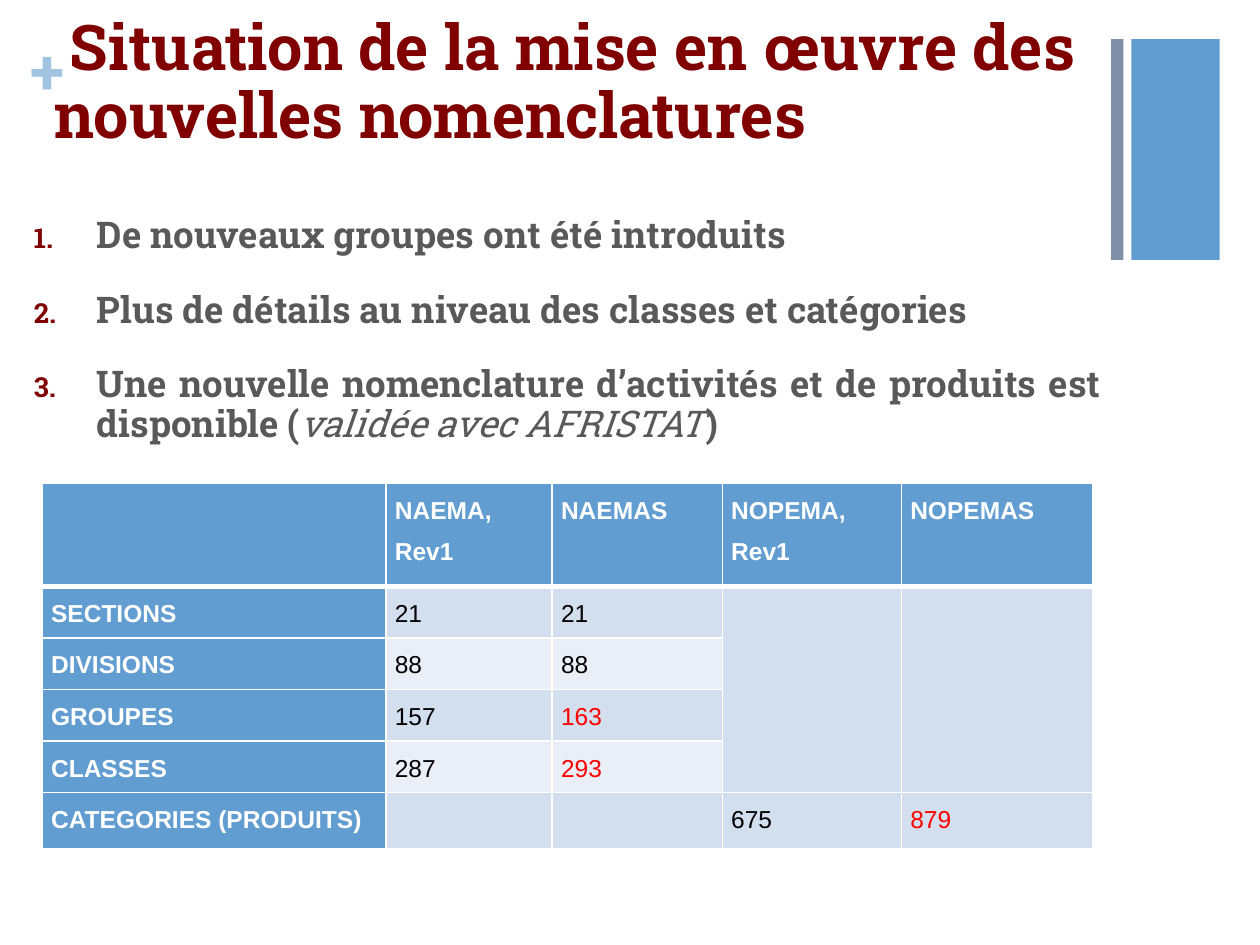
from lxml.etree import SubElement
from pptx import Presentation
from pptx.dml.color import RGBColor
from pptx.enum.shapes import MSO_SHAPE as Shape
from pptx.enum.text import MSO_ANCHOR as Anchor, MSO_AUTO_SIZE as AutoSize, PP_ALIGN as Align
from pptx.oxml.ns import qn
from pptx.util import Cm, Pt

COLOURS = {
    "blue": "629DD1", "pale_blue": "A1C4E3", "slate": "7F8FA9",
    "maroon": "800000", "grey": "595959", "white": "FFFFFF",
    "black": "000000", "red": "FF0000", "band": "D3DFEE", "light_band": "EAEFF7",
}
SLAB = "Roboto Slab"
POINTS = [
    [("De nouveaux groupes ont été introduits", False)],
    [("Plus de détails au niveau des classes et catégories", False)],
    [("Une nouvelle nomenclature d’activités et de produits est disponible (", False),
     ("validée avec AFRISTAT", True), (")", False)],
]
ROWS = [
    ["", "NAEMA, Rev1", "NAEMAS", "NOPEMA, Rev1", "NOPEMAS"],
    ["SECTIONS", "21", "21", "", ""],
    ["DIVISIONS", "88", "88", "", ""],
    ["GROUPES", "157", "163", "", ""],
    ["CLASSES", "287", "293", "", ""],
    ["CATEGORIES (PRODUITS)", "", "", "675", "879"],
]
CHANGED = {"163", "293", "879"}
COLUMN_WIDTHS = [6.93, 3.35, 3.43, 3.61, 3.86]
ROW_HEIGHTS = [2.08, 1.04, 1.04, 1.04, 1.04, 1.12]


def rgb(name):
    return RGBColor.from_string(COLOURS[name])


def add_span(para, text, size, colour, font=SLAB, bold=True, italic=False):
    span = para.add_run()
    span.text = text
    span.font.size = Pt(size)
    span.font.name = font
    span.font.bold = bold
    span.font.italic = italic
    span.font.color.rgb = rgb(colour)


def place(box, left, top, width, height):
    box.left, box.top, box.width, box.height = Cm(left), Cm(top), Cm(width), Cm(height)


def add_bar(page, left, width, colour):
    bar = page.shapes.add_shape(Shape.RECTANGLE, Cm(left), Cm(0.79), Cm(width), Cm(4.45))
    bar.shadow.inherit = False
    bar.fill.solid()
    bar.fill.fore_color.rgb = rgb(colour)
    bar.line.fill.background()


def add_plus(page):
    frame = page.shapes.add_textbox(Cm(0.61), Cm(0.64), Cm(0.71), Cm(1.55)).text_frame
    frame.margin_left = frame.margin_right = frame.margin_top = frame.margin_bottom = 0
    frame.word_wrap = False
    add_span(frame.paragraphs[0], "+", 36, "pale_blue")


def fill_title(page):
    title = page.shapes.title
    place(title, 0.84, 0.43, 21.16, 2.54)
    frame = title.text_frame
    frame.auto_size = AutoSize.NONE
    frame.vertical_anchor = Anchor.MIDDLE
    para = frame.paragraphs[0]
    para.alignment = Align.LEFT
    para.line_spacing = 0.9
    add_span(para, " Situation de la mise en œuvre des nouvelles nomenclatures", 36, "maroon")


def number_para(para):
    props = para._p.get_or_add_pPr()
    props.set("marL", str(Cm(1.27)))
    props.set("indent", str(-Cm(1.27)))
    colour = SubElement(props, qn("a:buClr"))
    SubElement(colour, qn("a:srgbClr"), val=COLOURS["maroon"])
    SubElement(props, qn("a:buSzPct"), val="75000")
    SubElement(props, qn("a:buFont"), typeface=SLAB)
    SubElement(props, qn("a:buAutoNum"), type="arabicPeriod")


def fill_list(page):
    body = page.placeholders[1]
    place(body, 0.43, 4.24, 22.02, 13.41)
    frame = body.text_frame
    frame.auto_size = AutoSize.NONE
    for index, point in enumerate(POINTS):
        para = frame.add_paragraph() if index else frame.paragraphs[0]
        para.level = 1
        para.alignment = Align.JUSTIFY
        para.line_spacing = 0.9
        para.space_before = Pt(20)
        number_para(para)
        for text, italic in point:
            add_span(para, text, 21, "grey", bold=not italic, italic=italic)


def add_borders(cell, top, bottom):
    props = cell._tc.get_or_add_tcPr()
    for side, width in (("L", 1), ("R", 1), ("T", top), ("B", bottom)):
        line = SubElement(props, qn(f"a:ln{side}"), w=str(Pt(width)))
        fill = SubElement(line, qn("a:solidFill"))
        SubElement(fill, qn("a:srgbClr"), val=COLOURS["white"])


def style_cell(cell, row, column, text):
    heading = row == 0 or column == 0
    cell.margin_left = cell.margin_right = Cm(0.18)
    cell.margin_top = cell.margin_bottom = 0
    add_borders(cell, 3 if row == 1 else 1, 3 if row == 0 else 1)
    cell.fill.solid()
    banded = row % 2 == 1 or column > 2
    cell.fill.fore_color.rgb = rgb("blue" if heading else "band" if banded else "light_band")
    if text:
        para = cell.text_frame.paragraphs[0]
        para.alignment = Align.JUSTIFY
        para.line_spacing = 1.5
        colour = "white" if heading else "red" if text in CHANGED else "black"
        add_span(para, text, 14, colour, "Arial", heading)


def add_counts(page):
    table = page.shapes.add_table(
        len(ROWS), len(COLUMN_WIDTHS), Cm(0.85), Cm(9.74),
        Cm(sum(COLUMN_WIDTHS)), Cm(sum(ROW_HEIGHTS))).table
    table.first_col = True
    for column, width in zip(table.columns, COLUMN_WIDTHS):
        column.width = Cm(width)
    for row, height in zip(table.rows, ROW_HEIGHTS):
        row.height = Cm(height)
    for row, texts in enumerate(ROWS):
        for column, text in enumerate(texts):
            style_cell(table.cell(row, column), row, column, text)
    for column in (3, 4):
        table.cell(1, column).merge(table.cell(4, column))


def main():
    deck = Presentation()
    deck.slide_width, deck.slide_height = Cm(25.4), Cm(19.05)
    page = deck.slides.add_slide(deck.slide_layouts[1])
    add_bar(page, 22.81, 1.78, "blue")
    add_plus(page)
    add_bar(page, 22.4, 0.25, "slate")
    fill_title(page)
    fill_list(page)
    add_counts(page)
    deck.save("out.pptx")


if __name__ == "__main__":
    main()
